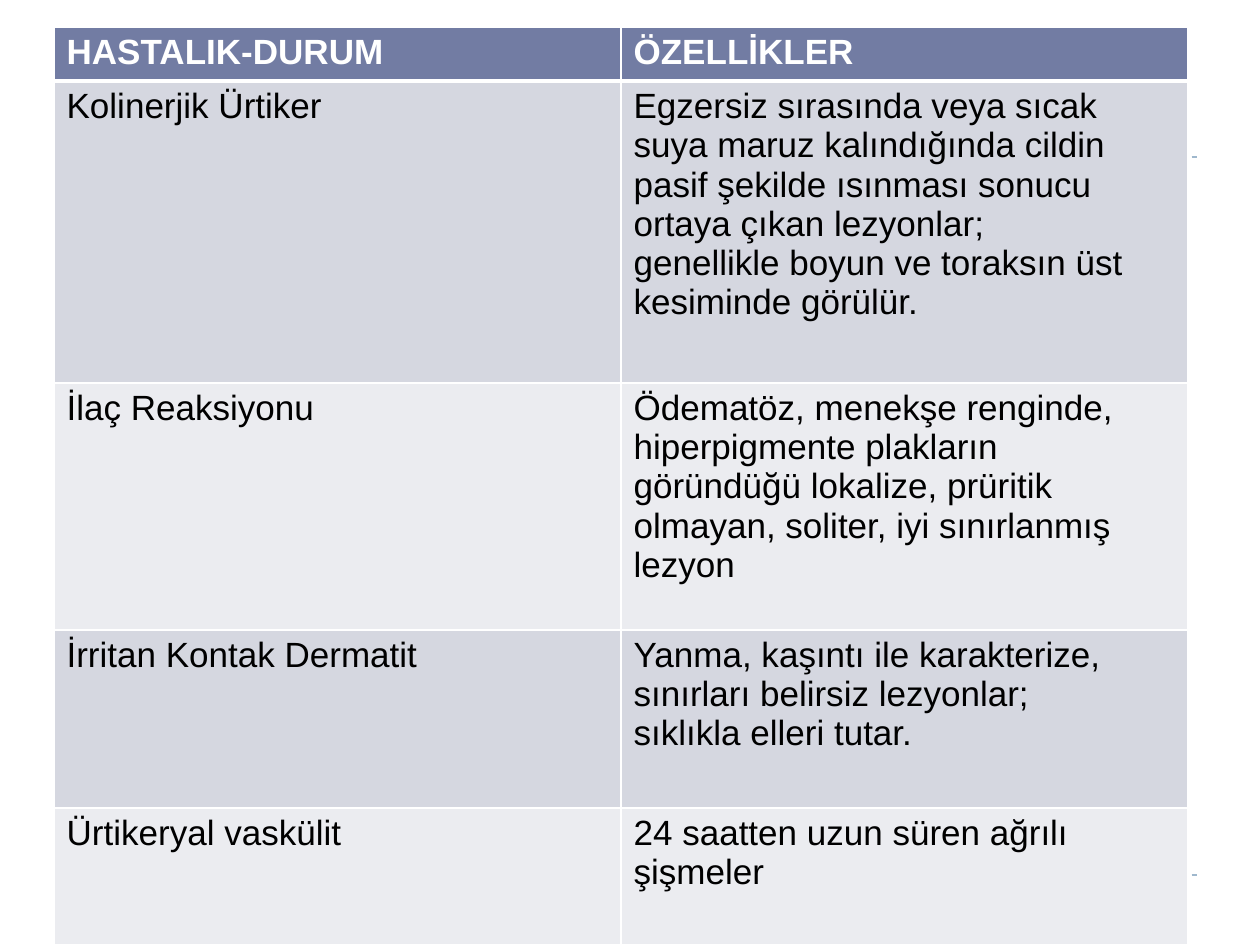
import lxml.etree
import pptx
import pptx.dml.color
import pptx.enum.dml
import pptx.enum.shapes
import pptx.oxml.ns
import pptx.util

SCALE = 914400 / 126
HUES = {
    "head": "727CA3",
    "dark": "D5D7E0",
    "pale": "EBECF0",
    "rule": "9FB8CD",
    "white": "FFFFFF",
    "black": "000000",
}
COLS = [567, 567]
ROWS = [
    (54, ["HASTALIK-DURUM"], ["ÖZELLİKLER"]),
    (302, ["Kolinerjik Ürtiker"], [
        "Egzersiz sırasında veya sıcak suya maruz kalındığında cildin "
        "pasif şekilde ısınması sonucu ortaya çıkan lezyonlar;",
        "genellikle boyun ve toraksın üst kesiminde görülür."]),
    (247, ["İlaç Reaksiyonu"], [
        "Ödematöz, menekşe renginde, hiperpigmente plakların göründüğü "
        "lokalize, prüritik olmayan, soliter, iyi sınırlanmış lezyon"]),
    (178, ["İrritan Kontak Dermatit"], [
        "Yanma, kaşıntı ile karakterize, sınırları belirsiz lezyonlar;",
        "sıklıkla elleri tutar."]),
    (137, ["Ürtikeryal vaskülit"], ["24 saatten uzun süren ağrılı şişmeler"]),
]


def px(num):
    return pptx.util.Emu(round(num * SCALE))


def hue(name):
    return pptx.dml.color.RGBColor.from_string(HUES[name])


def add_rule(slide, top):
    line = slide.shapes.add_connector(
        pptx.enum.shapes.MSO_CONNECTOR.STRAIGHT,
        px(63), px(top), px(1197), px(top))
    line.line.color.rgb = hue("rule")
    line.line.width = pptx.util.Pt(0.75)
    line.line.dash_style = pptx.enum.dml.MSO_LINE.DASH
    lxml.etree.SubElement(line._element.spPr, pptx.oxml.ns.qn("a:effectLst"))


def set_edges(cell, widths):
    """Draw white cell borders; widths maps L, R, T, B to points, in that order."""
    props = cell._tc.get_or_add_tcPr()
    for spot, (side, width) in enumerate(widths.items()):
        props.insert(spot, pptx.oxml.parse_xml(
            f'<a:ln{side} {pptx.oxml.ns.nsdecls("a")} w="{pptx.util.Pt(width)}">'
            f'<a:solidFill><a:srgbClr val="{HUES["white"]}"/></a:solidFill>'
            f'</a:ln{side}>'))


def fill_cell(cell, texts, fill, ink, bold, widths):
    cell.fill.solid()
    cell.fill.fore_color.rgb = hue(fill)
    set_edges(cell, widths)
    cell.text = "\n".join(texts)
    form = {"name": "Arial", "size": pptx.util.Pt(20), "bold": bold}
    for para in cell.text_frame.paragraphs:
        for run in para.runs:
            for key, value in form.items():
                setattr(run.font, key, value)
            run.font.color.rgb = hue(ink)


def add_grid(slide):
    tall = sum(row[0] for row in ROWS)
    grid = slide.shapes.add_table(
        len(ROWS), len(COLS), px(54), px(27), px(sum(COLS)), px(tall)).table
    for col, width in zip(grid.columns, COLS):
        col.width = px(width)
    for r, (height, *cells) in enumerate(ROWS):
        grid.rows[r].height = px(height)
        head = r == 0
        fill = "head" if head else ("pale", "dark")[r % 2]
        ink = "white" if head else "black"
        widths = {"L": 1, "R": 1, "T": 3 if r == 1 else 1, "B": 3 if head else 1}
        for c, texts in enumerate(cells):
            fill_cell(grid.cell(r, c), texts, fill, ink, head, widths)


def main():
    deck = pptx.Presentation()
    deck.slide_width, deck.slide_height = px(1260), px(945)
    slide = deck.slides.add_slide(deck.slide_layouts[6])
    for top in (875, 157):
        add_rule(slide, top)
    add_grid(slide)
    deck.save("out.pptx")


if __name__ == "__main__":
    main()
